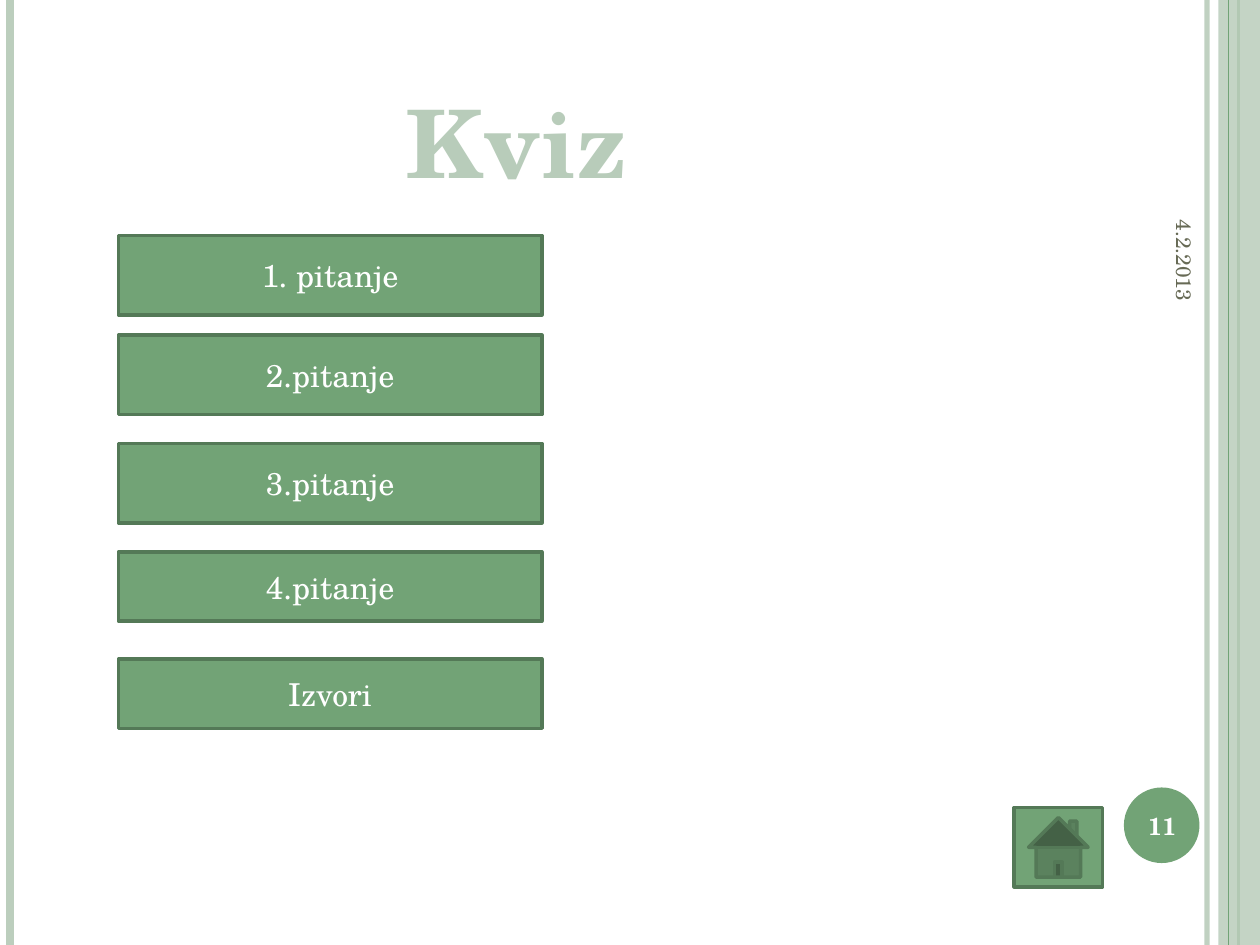
from dataclasses import dataclass

from pptx import Presentation
from pptx.dml.color import RGBColor
from pptx.enum.shapes import MSO_CONNECTOR, MSO_SHAPE
from pptx.enum.text import MSO_ANCHOR, PP_ALIGN
from pptx.oxml.ns import qn
from pptx.oxml.xmlchemy import OxmlElement
from pptx.util import Inches, Pt

LINE = MSO_CONNECTOR.STRAIGHT
RECT, OVAL = MSO_SHAPE.RECTANGLE, MSO_SHAPE.OVAL
BLANK, HOME = MSO_SHAPE.ACTION_BUTTON_CUSTOM, MSO_SHAPE.ACTION_BUTTON_HOME
MID, TOP = MSO_ANCHOR.MIDDLE, MSO_ANCHOR.TOP
CENTER, RIGHT = PP_ALIGN.CENTER, PP_ALIGN.RIGHT


@dataclass(frozen=True)
class Theme:
    font: str = "TeX Gyre Schola"
    green: str = "72A376"
    edge: str = "547957"
    pale: str = "BCCEBD"
    head: str = "B8CCBA"
    ink: str = "676A55"
    white: str = "FFFFFF"
    title: float = 54
    label: float = 18
    number: float = 14
    date: float = 12
    border: float = 2


@dataclass(frozen=True)
class Box:
    left: float
    top: float
    width: float
    height: float

    def sides(self) -> list:
        return [Inches(n) for n in (self.left, self.top, self.width, self.height)]


@dataclass(frozen=True)
class Stripe:
    x: float
    color: str
    width: float
    alpha: int = 100


@dataclass(frozen=True)
class Button:
    text: str
    top: float
    height: float


THEME = Theme()
HIGH = 7.5
BACK = [
    Stripe(9.58, THEME.pale, 3, 93),
    Stripe(0.08, THEME.pale, 4.5),
    Stripe(9.83, THEME.green, 1.5),
]
FRONT = Stripe(9.75, THEME.green, 0.75)
BUTTONS = [
    Button("1. pitanje", 1.87, 0.63),
    Button("2.pitanje", 2.66, 0.63),
    Button("3.pitanje", 3.52, 0.63),
    Button("4.pitanje", 4.38, 0.55),
    Button("Izvori", 5.23, 0.55),
]


def fade(shape, alpha: int) -> None:
    """Make the first colour of a shape partly see-through, in percent."""
    if alpha < 100:
        color = next(shape._element.spPr.iter(qn("a:srgbClr")))
        node = OxmlElement("a:alpha")
        node.set("val", str(alpha * 1000))
        color.append(node)


def draw_stripe(slide, stripe: Stripe) -> None:
    x = Inches(stripe.x)
    line = slide.shapes.add_connector(LINE, x, Inches(0), x, Inches(HIGH))
    line.line.color.rgb = RGBColor.from_string(stripe.color)
    line.line.width = Pt(stripe.width)
    fade(line, stripe.alpha)
    line._element.spPr.append(OxmlElement("a:effectLst"))


def draw_shape(slide, kind, box: Box, fill: str, edge: str = "", alpha: int = 100):
    shape = slide.shapes.add_shape(kind, *box.sides())
    shape.shadow.inherit = False
    shape.fill.solid()
    shape.fill.fore_color.rgb = RGBColor.from_string(fill)
    fade(shape, alpha)
    if edge:
        shape.line.color.rgb = RGBColor.from_string(edge)
        shape.line.width = Pt(THEME.border)
    else:
        shape.line.fill.background()
    return shape


def write(shape, text: str, size: float, color: str, bold: bool = False,
          align=CENTER, anchor=MID, wrap: bool = True) -> None:
    frame = shape.text_frame
    frame.word_wrap = wrap
    frame.vertical_anchor = anchor
    para = frame.paragraphs[0]
    para.alignment = align
    run = para.add_run()
    run.text = text
    style = {"name": THEME.font, "size": Pt(size), "bold": bold}
    for key, value in style.items():
        setattr(run.font, key, value)
    run.font.color.rgb = RGBColor.from_string(color)


def draw_frame(slide) -> None:
    """Draw the side stripes, the number disc and the home button."""
    for stripe in BACK:
        draw_stripe(slide, stripe)
    draw_shape(slide, RECT, Box(9.67, 0, 0.33, HIGH), THEME.pale, alpha=87)
    draw_stripe(slide, FRONT)
    draw_shape(slide, OVAL, Box(8.92, 6.25, 0.6, 0.6), THEME.green)
    draw_shape(slide, HOME, Box(8.05, 6.41, 0.7, 0.63), THEME.green, THEME.edge)


def draw_text(slide) -> None:
    add = slide.shapes.add_textbox
    date = add(*Box(8.3, 1.18, 2.2, 0.42).sides())
    date.rotation = 90
    write(date, "4.2.2013", THEME.date, THEME.ink, align=RIGHT)
    number = add(*Box(8.89, 6.27, 0.67, 0.57).sides())
    write(number, "11", THEME.number, THEME.white, bold=True)
    title = add(*Box(3.12, 0.62, 1.97, 1.01).sides())
    write(title, "Kviz", THEME.title, THEME.head, bold=True, anchor=TOP, wrap=False)


def main() -> None:
    deck = Presentation()
    deck.slide_width, deck.slide_height = Inches(10), Inches(HIGH)
    slide = deck.slides.add_slide(deck.slide_layouts[6])
    draw_frame(slide)
    draw_text(slide)
    for button in BUTTONS:
        box = Box(0.94, button.top, 3.36, button.height)
        shape = draw_shape(slide, BLANK, box, THEME.green, THEME.edge)
        write(shape, button.text, THEME.label, THEME.white)
    deck.save("out.pptx")


if __name__ == "__main__":
    main()
